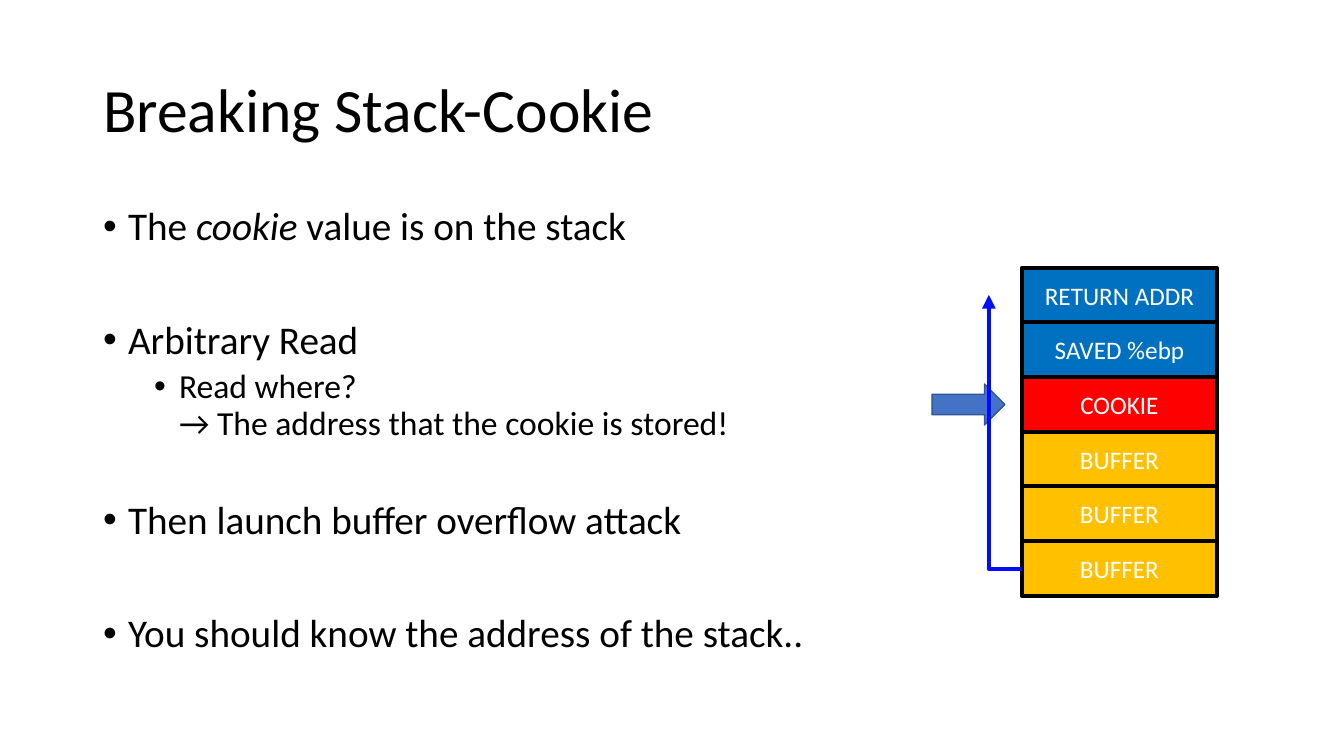
from dataclasses import dataclass

from lxml import etree
from pptx import Presentation
from pptx.dml.color import RGBColor
from pptx.enum.shapes import MSO_CONNECTOR, MSO_SHAPE
from pptx.enum.text import MSO_ANCHOR, MSO_AUTO_SIZE, PP_ALIGN
from pptx.oxml.ns import qn
from pptx.shapes.autoshape import Shape
from pptx.slide import Slide
from pptx.text.text import Font
from pptx.util import Emu, Pt

PX_PER_INCH = 100.8
FONT = "Calibri"
BLACK = RGBColor(0x00, 0x00, 0x00)
WHITE = RGBColor(0xFF, 0xFF, 0xFF)
BLUE = RGBColor(0x00, 0x70, 0xC0)
RED = RGBColor(0xFF, 0x00, 0x00)
AMBER = RGBColor(0xFF, 0xC0, 0x00)
POINTER_FILL = RGBColor(0x44, 0x72, 0xC4)
POINTER_LINE = RGBColor(0x32, 0x54, 0x91)
OVERFLOW_LINE = RGBColor(0x00, 0x0C, 0xFF)

STACK_LEFT, STACK_TOP, STACK_WIDTH, STACK_HEIGHT = 1022, 268, 195, 328
OVERFLOW_LEFT = 989


@dataclass(frozen=True)
class Bullet:
    spans: tuple[str, ...]  # every second span is italic
    space_before: float
    level: int = 0


@dataclass(frozen=True)
class Cell:
    label: str
    fill: RGBColor


BULLETS = (
    Bullet(("The ", "cookie", " value is on the stack"), 10),
    Bullet(("Arbitrary Read",), 50.8),
    Bullet(("Read where?\n→ The address that the cookie is stored!",), 5, 1),
    Bullet(("Then launch buffer overflow attack",), 41.4),
    Bullet(("You should know the address of the stack..",), 50.8),
)
LEVEL_SIZES = (28, 24)
LEVEL_INDENTS = (25, 76)
HANGING = 25

STACK = (
    Cell("RETURN ADDR", BLUE),
    Cell("SAVED %ebp", BLUE),
    Cell("COOKIE", RED),
    Cell("BUFFER", AMBER),
    Cell("BUFFER", AMBER),
    Cell("BUFFER", AMBER),
)


def px(length: int) -> Emu:
    return Emu(round(length * 914400 / PX_PER_INCH))


def set_font(font: Font, size: int, color: RGBColor) -> None:
    font.name = FONT
    font.size = Pt(size)
    font.color.rgb = color


def place(shape: Shape, left: int, top: int, width: int, height: int) -> None:
    shape.left, shape.top = px(left), px(top)
    shape.width, shape.height = px(width), px(height)


def fill_title(title: Shape) -> None:
    place(title, 93, 40, 1159, 146)
    frame = title.text_frame
    frame.text = "Breaking Stack-Cookie"
    frame.auto_size = MSO_AUTO_SIZE.NONE
    frame.vertical_anchor = MSO_ANCHOR.MIDDLE
    para = frame.paragraphs[0]
    para.alignment = PP_ALIGN.LEFT
    para.line_spacing = 0.9
    set_font(para.font, 44, BLACK)


def fill_body(body: Shape) -> None:
    place(body, 93, 202, 733, 480)
    frame = body.text_frame
    frame.auto_size = MSO_AUTO_SIZE.NONE
    for index, bullet in enumerate(BULLETS):
        para = frame.add_paragraph() if index else frame.paragraphs[0]
        para.level = bullet.level
        para.line_spacing = 0.9
        para.space_before = Pt(bullet.space_before)
        set_font(para.font, LEVEL_SIZES[bullet.level], BLACK)
        properties = para._p.get_or_add_pPr()
        properties.set("marL", str(px(LEVEL_INDENTS[bullet.level])))
        properties.set("indent", str(-px(HANGING)))
        marker_font = etree.Element(qn("a:buFont"), typeface="Arial")
        marker = etree.Element(qn("a:buChar"), char="•")
        default_font = properties.find(qn("a:defRPr"))
        default_font.addprevious(marker_font)
        default_font.addprevious(marker)
        for position, text in enumerate(bullet.spans):
            for line_index, line in enumerate(text.split("\n")):
                if line_index:
                    para.add_line_break()
                span = para.add_run()
                span.text = line
                if position % 2:
                    span.font.italic = True


def add_box(page: Slide, kind: MSO_SHAPE, area: tuple[int, int, int, int],
            fill: RGBColor, line: RGBColor, line_width: int) -> Shape:
    box = page.shapes.add_shape(kind, *map(px, area))
    box.shadow.inherit = False
    box.fill.solid()
    box.fill.fore_color.rgb = fill
    box.line.color.rgb = line
    box.line.width = Pt(line_width)
    return box


def add_stack(page: Slide) -> None:
    edges = [STACK_TOP + STACK_HEIGHT * row // len(STACK)
             for row in range(len(STACK) + 1)]
    for cell, top, bottom in zip(STACK, edges, edges[1:]):
        area = (STACK_LEFT, top, STACK_WIDTH, bottom - top)
        box = add_box(page, MSO_SHAPE.RECTANGLE, area, cell.fill, BLACK, 3)
        frame = box.text_frame
        frame.text = cell.label
        frame.vertical_anchor = MSO_ANCHOR.MIDDLE
        para = frame.paragraphs[0]
        para.alignment = PP_ALIGN.CENTER
        set_font(para.font, 18, WHITE)


def add_overflow_arrow(page: Slide) -> None:
    """Run from the lowest buffer left and up to the return address."""
    half_cell = STACK_HEIGHT // len(STACK) // 2
    arrow = page.shapes.add_connector(
        MSO_CONNECTOR.ELBOW,
        px(STACK_LEFT), px(STACK_TOP + STACK_HEIGHT - half_cell),
        px(OVERFLOW_LEFT), px(STACK_TOP + half_cell),
    )
    arrow.line.color.rgb = OVERFLOW_LINE
    arrow.line.width = Pt(3.25)
    properties = arrow._element.spPr
    properties.find(qn("a:prstGeom")).set("prst", "bentConnector2")
    etree.SubElement(properties.find(qn("a:ln")), qn("a:tailEnd"), type="triangle")
    etree.SubElement(properties, qn("a:effectLst"))


def main() -> None:
    deck = Presentation()
    deck.slide_width, deck.slide_height = px(1344), px(756)
    page = deck.slides.add_slide(deck.slide_layouts[1])
    fill_title(page.shapes.title)
    fill_body(page.placeholders[1])
    add_stack(page)
    add_box(page, MSO_SHAPE.RIGHT_ARROW, (932, 384, 73, 41),
            POINTER_FILL, POINTER_LINE, 1)
    add_overflow_arrow(page)
    deck.save("out.pptx")


if __name__ == "__main__":
    main()
